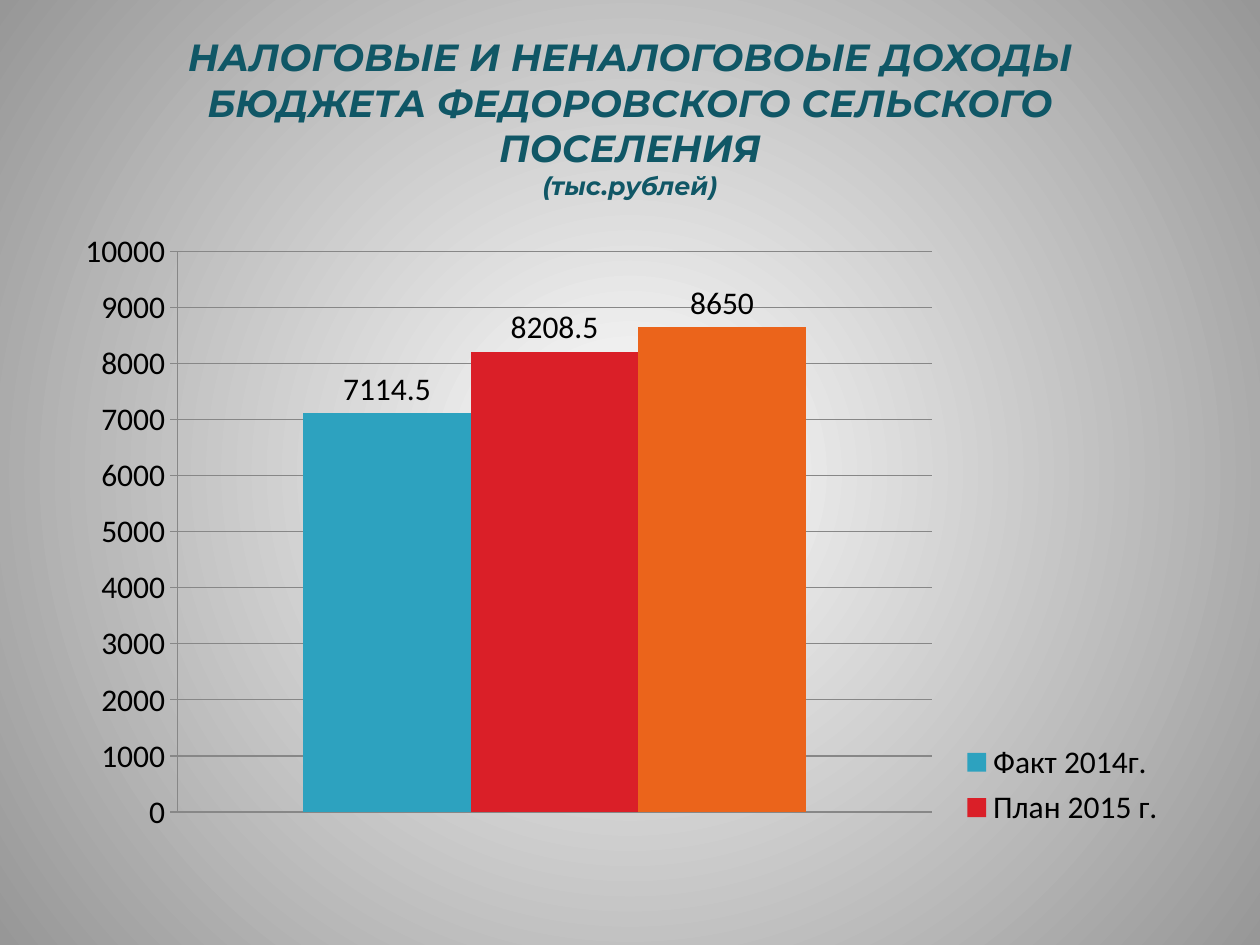
from lxml.etree import SubElement
from pptx import Presentation
from pptx.chart.data import CategoryChartData
from pptx.dml.color import RGBColor
from pptx.enum.chart import XL_CHART_TYPE, XL_LABEL_POSITION, XL_LEGEND_POSITION, XL_TICK_MARK
from pptx.enum.text import MSO_ANCHOR, PP_ALIGN
from pptx.oxml.ns import qn
from pptx.util import Emu, Pt

SCALE = 914400 / 126
COLORS = {
    "center": "FFFFFF",
    "edge": "979797",
    "title": "105766",
    "text": "000000",
    "axis": "878787",
    "fact": "2DA2BF",
    "plan": "DA1F28",
    "unnamed": "EB641B",
}
SERIES = [
    ("Факт 2014г.", 7114.5, "fact"),
    ("План 2015 г.", 8208.5, "plan"),
    ("", 8650, "unnamed"),
]


def px(length):
    return Emu(round(length * SCALE))


def rgb(name):
    return RGBColor.from_string(COLORS[name])


def paint_background(slide):
    fill = slide.background.fill
    fill.gradient()
    for stop, name, position in zip(fill.gradient_stops, ("center", "edge"), (0, 1)):
        stop.color.rgb = rgb(name)
        stop.position = position
    gradient = slide.element.find(".//" + qn("a:gradFill"))
    gradient.remove(gradient.find(qn("a:lin")))
    circle = SubElement(gradient, qn("a:path"), {"path": "circle"})
    SubElement(circle, qn("a:fillToRect"), {side: "50000" for side in "ltrb"})


def add_title(slide, left, top, width, height):
    shape = slide.shapes.add_textbox(px(left), px(top), px(width), px(height))
    frame = shape.text_frame
    frame.word_wrap = True
    frame.vertical_anchor = MSO_ANCHOR.MIDDLE
    paragraph = frame.paragraphs[0]
    paragraph.text = (
        "НАЛОГОВЫЕ И НЕНАЛОГОВОЫЕ ДОХОДЫ БЮДЖЕТА ФЕДОРОВСКОГО СЕЛЬСКОГО ПОСЕЛЕНИЯ"
        "\v(тыс.рублей)"
    )
    paragraph.alignment = PP_ALIGN.CENTER
    for run, size in zip(paragraph.runs, (21.6, 14.4)):
        run.font.name = "Montserrat"
        run.font.size = Pt(size)
        run.font.bold = True
        run.font.italic = True
        run.font.color.rgb = rgb("title")


def set_layout(element, position, box, inner=False):
    for previous in element.findall(qn("c:layout")):
        element.remove(previous)
    layout = element.makeelement(qn("c:layout"))
    element.insert(position, layout)
    manual = SubElement(layout, qn("c:manualLayout"))
    if inner:
        SubElement(manual, qn("c:layoutTarget"), val="inner")
    for mode in ("xMode", "yMode"):
        SubElement(manual, qn("c:" + mode), val="edge")
    for key, value in zip("xywh", box):
        SubElement(manual, qn("c:" + key), val=f"{value:.3f}")


def add_legend(chart, box):
    chart.has_legend = True
    legend = chart.legend
    legend.position = XL_LEGEND_POSITION.RIGHT
    legend.include_in_layout = False
    element = chart.element.find(".//" + qn("c:legend"))
    unnamed = [index for index, (name, value, color) in enumerate(SERIES) if not name]
    for position, index in enumerate(unnamed, start=1):
        entry = element.makeelement(qn("c:legendEntry"))
        element.insert(position, entry)
        SubElement(entry, qn("c:idx"), val=str(index))
        SubElement(entry, qn("c:delete"), val="1")
    set_layout(element, 1 + len(unnamed), box)


def add_income_chart(slide, left, top, width, height):
    data = CategoryChartData()
    data.categories = ["1"]
    for name, value, color in SERIES:
        data.add_series(name, [value])
    chart = slide.shapes.add_chart(
        XL_CHART_TYPE.COLUMN_CLUSTERED, px(left), px(top), px(width), px(height), data
    ).chart
    chart.has_title = False
    chart.font.name = "Calibri"
    chart.font.size = Pt(18)
    chart.font.color.rgb = rgb("text")

    plot = chart.plots[0]
    plot.gap_width = 150
    plot.overlap = 0
    plot.vary_by_categories = False
    for series, (name, value, color) in zip(plot.series, SERIES):
        series.format.fill.solid()
        series.format.fill.fore_color.rgb = rgb(color)
        labels = series.data_labels
        labels.show_value = True
        labels.position = XL_LABEL_POSITION.OUTSIDE_END

    chart.category_axis.visible = False
    axis = chart.value_axis
    axis.minimum_scale = 0
    axis.maximum_scale = 10000
    axis.major_unit = 1000
    axis.major_tick_mark = XL_TICK_MARK.CROSS
    axis.has_major_gridlines = True
    for line in (axis.format.line, axis.major_gridlines.format.line):
        line.color.rgb = rgb("axis")
        line.width = Pt(0.75)

    def share(x, y, w, h):
        return x / width, y / height, w / width, h / height

    plot_area = chart.element.find(".//" + qn("c:plotArea"))
    set_layout(plot_area, 0, share(115, 31, 754, 561), inner=True)
    add_legend(chart, share(896, 516, 208, 98))


def main():
    presentation = Presentation()
    presentation.slide_width = px(1260)
    presentation.slide_height = px(945)
    slide = presentation.slides.add_slide(presentation.slide_layouts[6])
    paint_background(slide)
    add_title(slide, 63, 38, 1134, 158)
    add_income_chart(slide, 63, 220, 1134, 624)
    presentation.save("out.pptx")


if __name__ == "__main__":
    main()
